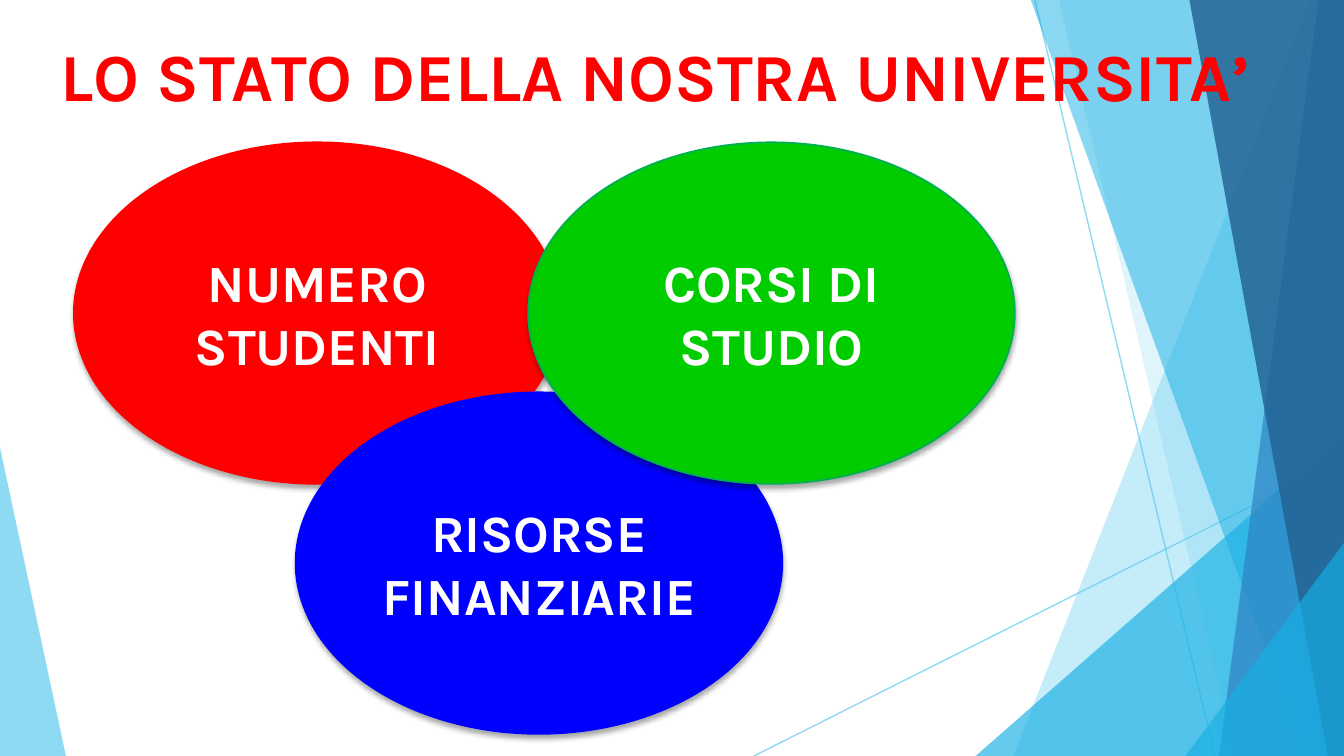
from lxml import etree
from pptx import Presentation
from pptx.dml.color import RGBColor
from pptx.enum.shapes import MSO_CONNECTOR, MSO_SHAPE
from pptx.enum.text import MSO_ANCHOR, PP_ALIGN
from pptx.oxml.ns import qn
from pptx.util import Inches, Pt

LINE, OVAL = MSO_CONNECTOR.STRAIGHT, MSO_SHAPE.OVAL
MIDDLE, LEFT, CENTER = MSO_ANCHOR.MIDDLE, PP_ALIGN.LEFT, PP_ALIGN.CENTER
FONT = "Karla"
W = 10
H = W * 9 / 16
HEX = {
    "sky": "5FCBEF", "cyan": "17B0E4", "steel": "2E83C3", "navy": "226292",
    "red": "FF0000", "blue": "0000FF", "green": "00CC00", "rim": "00B050",
    "white": "FFFFFF", "black": "000000",
}


def fade(shape, pct):
    color = next(shape.element.spPr.iter(qn("a:srgbClr")))
    etree.SubElement(color, qn("a:alpha")).set("val", str(pct * 1000))


def write(frame, text, size, color, align):
    frame.word_wrap = True
    frame.vertical_anchor = MIDDLE
    para = frame.paragraphs[0]
    para.alignment = align
    run = para.add_run()
    run.text = text
    run.font.name = FONT
    run.font.size = Pt(size)
    run.font.bold = True
    run.font.color.rgb = RGBColor.from_string(HEX[color])


deck = Presentation()
deck.slide_width, deck.slide_height = Inches(W), Inches(H)
slide = deck.slides.add_slide(deck.slide_layouts[5])
shapes = slide.shapes

facets = [
    ("sky", 70, [(0, 3.33), (0.49, H), (0, H)]),
    ("sky", 36, [(9.75, 0), (7.54, H), (W, H), (W, 0)]),
    ("sky", 20, [(7.88, 0), (9.19, H), (W, H), (W, 0)]),
    ("cyan", 66, [(7.26, H), (W, 3.22), (W, H)]),
    ("cyan", 50, [(7.67, 0), (9.7, H), (W, H), (W, 0)]),
    ("steel", 70, [(9.81, 0), (9.07, H), (W, H), (W, 0)]),
    ("navy", 82, [(8.85, 0), (9.88, H), (W, H), (W, 0)]),
    ("cyan", 66, [(8.82, H), (W, 4.04), (W, H)]),
]
rays = [(5.61, H, W, 3.42), (7.7, 0, 9.04, H)]

for spot, (color, pct, points) in enumerate(facets):
    dots = [(Inches(x), Inches(y)) for x, y in points]
    pen = shapes.build_freeform(*dots[0])
    pen.add_line_segments(dots[1:], close=True)
    facet = pen.convert_to_shape()
    facet.shadow.inherit = False
    facet.fill.solid()
    facet.fill.fore_color.rgb = RGBColor.from_string(HEX[color])
    facet.line.fill.background()
    fade(facet, pct)
    if spot == 0:
        for ends in rays:
            ray = shapes.add_connector(LINE, *[Inches(end) for end in ends])
            ray.line.color.rgb = RGBColor.from_string(HEX["sky"])
            ray.line.width = Pt(0.75)
            fade(ray, 70)
            etree.SubElement(ray.element.spPr, qn("a:effectLst"))

ovals = [
    ("NUMERO STUDENTI", 0.55, 1.06, "red", "red"),
    ("RISORSE FINANZIARIE", 2.2, 2.92, "blue", "blue"),
    ("CORSI DI STUDIO", 3.93, 1.06, "green", "rim"),
]
for text, x, y, color, edge in ovals:
    oval = shapes.add_shape(OVAL, Inches(x), Inches(y), Inches(3.62), Inches(2.54))
    oval.fill.solid()
    oval.fill.fore_color.rgb = RGBColor.from_string(HEX[color])
    oval.line.color.rgb = RGBColor.from_string(HEX[edge])
    oval.line.width = Pt(1)
    oval.shadow.inherit = False
    glow = etree.SubElement(oval.element.spPr.find(qn("a:effectLst")), qn("a:outerShdw"))
    glow.set("blurRad", str(Pt(3)))
    glow.set("dist", str(Pt(2)))
    glow.set("dir", "5400000")
    glow.set("rotWithShape", "0")
    tint = etree.SubElement(glow, qn("a:srgbClr"))
    tint.set("val", HEX["black"])
    etree.SubElement(tint, qn("a:alpha")).set("val", "35000")
    write(oval.text_frame, text, 28, "white", CENTER)

title = shapes.title
title.left, title.top = Inches(0.35), Inches(0.2)
title.width, title.height = Inches(9.09), Inches(0.71)
write(title.text_frame, "LO STATO DELLA NOSTRA UNIVERSITA’", 36, "red", LEFT)
title.element.getparent().append(title.element)

deck.save("out.pptx")
